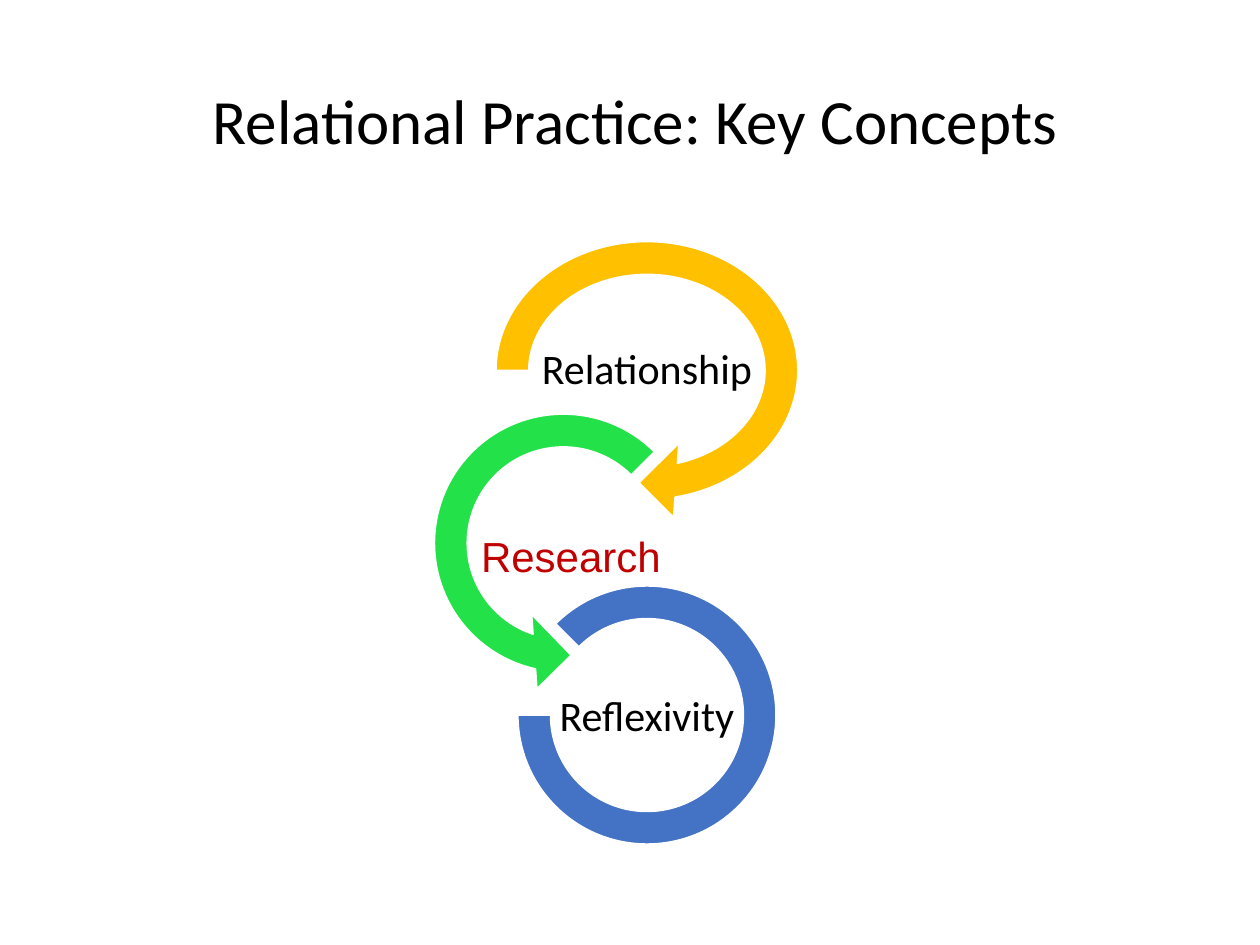
from dataclasses import dataclass

from pptx import Presentation
from pptx.dml.color import RGBColor
from pptx.enum import shapes, text
from pptx.util import Pt


@dataclass(frozen=True)
class Theme:
    """Colours, fonts and type sizes of the slide."""
    ink: str = "000000"
    paper: str = "FFFFFF"
    gold: str = "FFC000"
    green: str = "23E148"
    blue: str = "4472C4"
    red: str = "C00000"
    body: str = "Calibri"
    accent: str = "Arial"
    head: int = 36
    label: int = 24


THEME = Theme()


def fill_text(frame, words, size, font, color, align, anchor, inset, space):
    """Write one formatted run into a text frame."""
    frame.word_wrap = True
    frame.auto_size = text.MSO_AUTO_SIZE.NONE
    frame.vertical_anchor = anchor
    for side in ("left", "top", "right", "bottom"):
        setattr(frame, f"margin_{side}", Pt(inset))
    para = frame.paragraphs[0]
    para.alignment = align
    para.line_spacing = space
    run = para.add_run()
    run.text = words
    run.font.size = Pt(size)
    run.font.name = font
    run.font.color.rgb = RGBColor.from_string(color)


def add_title(slide, box, words):
    """Place and format the title placeholder in its box."""
    title = slide.shapes.title
    title.left, title.top, title.width, title.height = map(Pt, box)
    fill_text(title.text_frame, words, THEME.head, THEME.body, THEME.ink,
              text.PP_ALIGN.CENTER, text.MSO_ANCHOR.MIDDLE, 3.6, 0.9)


def add_ring(parts, kind, box, color, adjust):
    """Draw one curved band with its adjustments."""
    ring = parts.add_shape(kind, *map(Pt, box))
    ring.shadow.inherit = False
    ring.fill.solid()
    ring.fill.fore_color.rgb = RGBColor.from_string(color)
    ring.line.color.rgb = RGBColor.from_string(THEME.paper)
    ring.line.width = Pt(1)
    for i, value in enumerate(adjust):
        ring.adjustments[i] = value


def add_label(parts, box, words):
    """Write a centred label inside a ring."""
    label = parts.add_textbox(*map(Pt, box))
    fill_text(label.text_frame, words, THEME.label, THEME.body, THEME.ink,
              text.PP_ALIGN.CENTER, text.MSO_ANCHOR.MIDDLE, 1.44, 0.9)


def add_cycle(slide, box):
    """Build the chain of three rings and their labels in a box."""
    left, top, width, height = box
    kind = shapes.MSO_SHAPE
    mid = left + 133.5
    loop, arc, step = 171.4, 147.6, 98.6
    parts = slide.shapes.add_group_shape().shapes
    add_ring(parts, kind.CIRCULAR_ARROW,
             (left + width - 196.6, top, 196.6, loop),
             THEME.gold, (0.11, 11.42, 45, 108, 0.125))
    add_label(parts, (mid - 114.5, top + 62, 229, 47.5), "Relationship")
    add_ring(parts, kind.LEFT_CIRCULAR_ARROW, (left, top + step, loop, loop),
             THEME.green, (0.11, 11.42, 63, 189, 0.125))
    add_ring(parts, kind.BLOCK_ARC,
             (mid - arc / 2, top + height - arc, arc, arc),
             THEME.blue, (135, 108, 0.127))
    add_label(parts, (mid - 74.5, top + 260.6, 149, 47.5), "Reflexivity")


def add_focus(slide, box, words):
    """Write the highlighted label at the foot of its box."""
    focus = slide.shapes.add_textbox(*map(Pt, box))
    fill_text(focus.text_frame, words, THEME.label, THEME.accent, THEME.red,
              text.PP_ALIGN.LEFT, text.MSO_ANCHOR.BOTTOM, 3.6, 1.0)
    focus.text_frame.margin_left = focus.text_frame.margin_right = Pt(7.2)


def main():
    """Build the slide and save it."""
    deck = Presentation()
    deck.slide_width, deck.slide_height = Pt(720), Pt(540)
    slide = deck.slides.add_slide(deck.slide_layouts[5])
    add_title(slide, (36, 21.6, 653.8, 98.6),
              "Relational Practice: Key Concepts")
    add_cycle(slide, (236.2, 126, 231.8, 356.4))
    add_focus(slide, (267.8, 270, 126, 65.5), "Research")
    deck.save("out.pptx")


if __name__ == "__main__":
    main()
